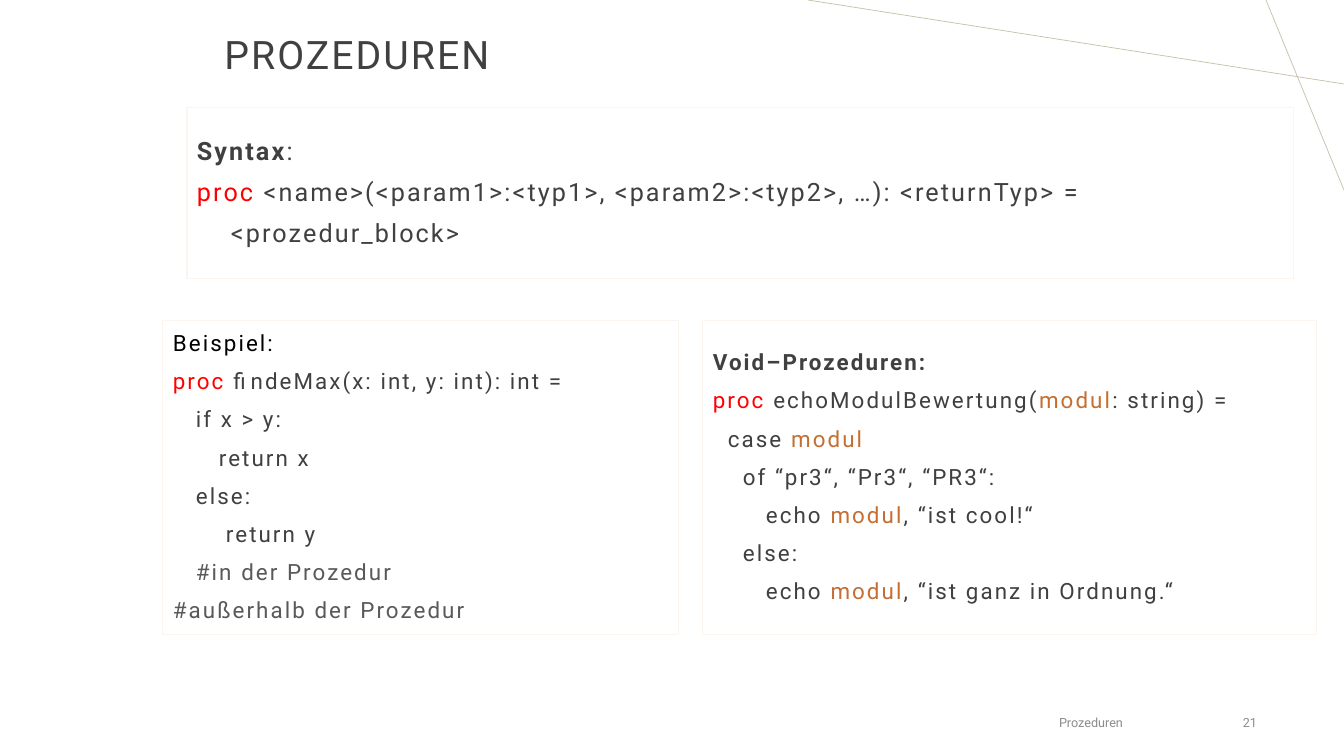
from pptx import Presentation, util as u
from pptx.dml.color import RGBColor
from pptx.enum import shapes, text
from lxml import etree

EMU_PER_PX = 914400 / 100.8
FONT = "Roboto"
STYLES = {
    "plain": ("404040", False),
    "heading": ("404040", True),
    "black": ("000000", False),
    "keyword": ("FF0000", False),
    "argument": ("C46E31", False),
    "comment": ("595959", False),
    "footer": ("8C8C8C", False),
}
ARGUMENT = ("modul", "argument")
KEYWORD = ("proc ", "keyword")

ACCENT_LINES = [((1344, 84), (808, 0)), ((1266, 0), (1344, 190))]

CODE_BOXES = [
    ((187, 108, 1107, 171), 18, [
        (0, [("Syntax", "heading"), (":", "plain")]),
        (0, [KEYWORD, ("<name>(<param1>:<typ1>, <param2>:<typ2>, …): <returnTyp> =", "plain")]),
        (34, [("<prozedur_block>", "plain")]),
    ]),
    ((703, 321, 614, 314), 16, [
        (0, [("Void–Prozeduren:", "heading")]),
        (0, [KEYWORD, ("echoModulBewertung(", "plain"), ARGUMENT, (": string) =", "plain")]),
        (15, [("case ", "plain"), ARGUMENT]),
        (30, [("of “pr3“, “Pr3“, “PR3“:", "plain")]),
        (53, [("echo ", "plain"), ARGUMENT, (", “ist cool!“", "plain")]),
        (30, [("else:", "plain")]),
        (53, [("echo ", "plain"), ARGUMENT, (", “ist ganz in Ordnung.“", "plain")]),
    ]),
    ((163, 321, 516, 314), 16, [
        (0, [("Beispiel:", "black")]),
        (0, [KEYWORD, ("findeMax(x: int, y: int): int =", "plain")]),
        (23, [("if x > y:", "plain")]),
        (46, [("return x", "plain")]),
        (23, [("else:", "plain")]),
        (53, [("return y", "plain")]),
        (23, [("#in der Prozedur", "comment")]),
        (0, [("#außerhalb der Prozedur", "comment")]),
    ]),
]

LABELS = [
    ((-107, -16, 928, 146), 28, "PROZEDUREN", "plain", text.PP_ALIGN.CENTER, 150),
    ((864, 703, 454, 40), 9, "Prozeduren", "footer", text.PP_ALIGN.CENTER, 0),
    ((965, 703, 302, 40), 9, "21", "footer", text.PP_ALIGN.RIGHT, 0),
]


def px(*lengths):
    return [u.Emu(round(length * EMU_PER_PX)) for length in lengths]


def color(hex_code):
    return RGBColor.from_string(hex_code)


def write_line(paragraph, pieces, size, align, tracking):
    paragraph.alignment = align
    paragraph.line_spacing = 0.9
    paragraph.font.name = FONT
    paragraph.font.size = u.Pt(size)
    for wording, style in pieces:
        run = paragraph.add_run()
        run.text = wording
        hex_code, bold = STYLES[style]
        run.font.color.rgb = color(hex_code)
        run.font.bold = bold
        run._r.get_or_add_rPr().set("spc", str(tracking))


def prepare_frame(frame):
    frame.word_wrap = True
    frame.vertical_anchor = text.MSO_ANCHOR.MIDDLE
    return frame


def add_accent_line(slide, start, end):
    accent = slide.shapes.add_connector(shapes.MSO_CONNECTOR.STRAIGHT, *px(*start, *end))
    accent.line.color.rgb = color("C6BFA9")
    accent.line.width = u.Pt(0.5)
    properties = accent._element.spPr
    etree.SubElement(properties, properties.tag.replace("}spPr", "}effectLst").replace(
        "presentationml", "drawingml"))


def add_code_box(slide, place, size, lines):
    box = slide.shapes.add_shape(shapes.MSO_SHAPE.RECTANGLE, *px(*place))
    box.shadow.inherit = False
    box.fill.background()
    box.line.color.rgb = color("FBF4EF")
    box.line.width = u.Pt(0.75)
    frame = prepare_frame(box.text_frame)
    for number, (indent, pieces) in enumerate(lines):
        paragraph = frame.add_paragraph() if number else frame.paragraphs[0]
        write_line(paragraph, pieces, size, text.PP_ALIGN.LEFT, 150)
        paragraph.space_before = u.Pt(10)
        paragraph._p.get_or_add_pPr().set("marL", str(px(indent)[0]))


def add_label(slide, place, size, wording, style, align, tracking):
    label = slide.shapes.add_textbox(*px(*place))
    frame = prepare_frame(label.text_frame)
    write_line(frame.paragraphs[0], [(wording, style)], size, align, tracking)


def main():
    deck = Presentation()
    deck.slide_width, deck.slide_height = px(1344, 756)
    slide = deck.slides.add_slide(deck.slide_layouts[6])
    for start, end in ACCENT_LINES:
        add_accent_line(slide, start, end)
    for code_box in CODE_BOXES:
        add_code_box(slide, *code_box)
    for label in LABELS:
        add_label(slide, *label)
    deck.save("out.pptx")


if __name__ == "__main__":
    main()
